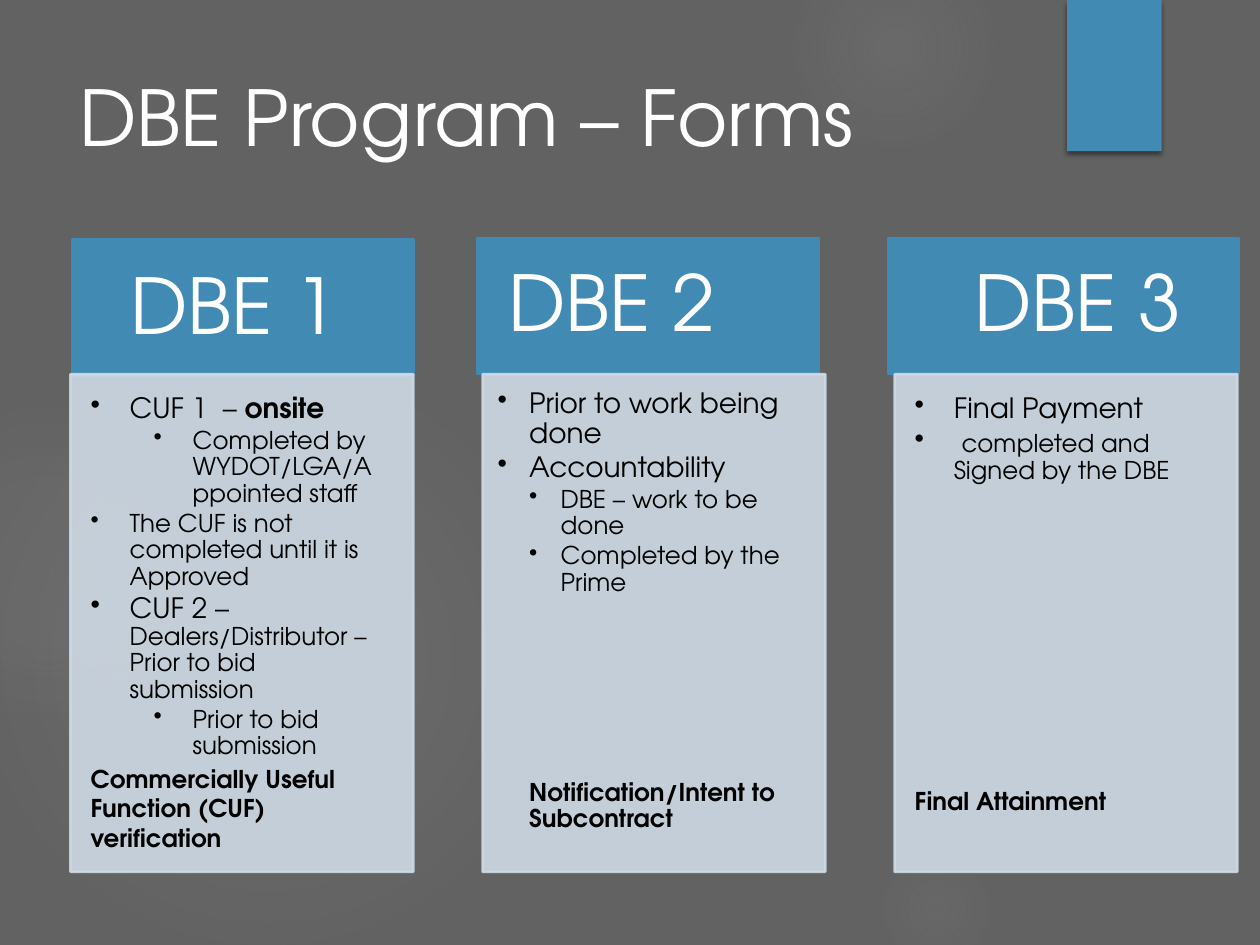
from lxml import etree
from pptx import Presentation
from pptx.dml.color import RGBColor
from pptx.enum.shapes import MSO_SHAPE
from pptx.enum.text import MSO_ANCHOR, PP_ALIGN
from pptx.oxml import parse_xml
from pptx.oxml.ns import nsdecls, qn
from pptx.util import Inches, Pt

RECTANGLE, OVAL = MSO_SHAPE.RECTANGLE, MSO_SHAPE.OVAL
TOP, MIDDLE = MSO_ANCHOR.TOP, MSO_ANCHOR.MIDDLE
LEFT, CENTER = PP_ALIGN.LEFT, PP_ALIGN.CENTER
FONT = "TeX Gyre Adventor"
BLUE, PALE, WHITE, BLACK, GREY = "418AB3", "CFDAE5", "FFFFFF", "000000", "626262"
color = RGBColor.from_string


def add_block(kind, box, fill):
    shape = slide.shapes.add_shape(kind, *map(Inches, box))
    shape.shadow.inherit = False
    shape.fill.solid()
    shape.fill.fore_color.rgb = color(fill)
    shape.line.color.rgb = color(fill)
    shape.line.width = Pt(1.5)
    return shape


def set_font(run, size, hex_color, bold=False):
    run.font.name, run.font.size, run.font.bold = FONT, Pt(size), bold
    run.font.color.rgb = color(hex_color)


presentation = Presentation()
presentation.slide_width, presentation.slide_height = Inches(10), Inches(7.5)
slide = presentation.slides.add_slide(presentation.slide_layouts[5])
slide.background.fill.solid()
slide.background.fill.fore_color.rgb = color(GREY)

# Soft background glows: left, top, diameter, (position %, opacity %) stops
glows = [
    (6.89, 1.83, 3.08, [(0, 7), (36, 6), (69, 0)]),
    (6.22, -0.5, 1.75, [(0, 14), (36, 7), (73, 0)]),
    (6.89, 6.67, 1.08, [(0, 9), (36, 5), (66, 0)]),
    (-0.17, 2.92, 4.58, [(0, 11), (36, 10), (75, 0)]),
    (-0.92, 3.17, 2.58, [(0, 8), (36, 8), (72, 0)]),
]
for left, top, diameter, stops in glows:
    glow = add_block(OVAL, (left, top, diameter, diameter), GREY)
    glow.line.fill.background()
    stop_xml = "".join(
        f'<a:gs pos="{position * 1000}"><a:srgbClr val="9E9E9E">'
        f'<a:alpha val="{opacity * 1000}"/></a:srgbClr></a:gs>'
        for position, opacity in stops)
    gradient = parse_xml(
        f'<a:gradFill {nsdecls("a")}><a:gsLst>{stop_xml}</a:gsLst><a:path path="circle">'
        '<a:fillToRect l="50000" t="50000" r="50000" b="50000"/></a:path></a:gradFill>')
    properties = glow._element.spPr
    properties.replace(properties.find(qn("a:solidFill")), gradient)

ribbon = add_block(RECTANGLE, (8.47, 0, 0.75, 1.2), BLUE)
ribbon.line.fill.background()
ribbon._element.spPr.find(qn("a:effectLst")).append(parse_xml(
    f'<a:outerShdw {nsdecls("a")} blurRad="38100" dist="25400" dir="5400000">'
    '<a:srgbClr val="000000"><a:alpha val="45000"/></a:srgbClr></a:outerShdw>'))

title = slide.shapes.title
slide.shapes._spTree.append(title._element)  # in front of the glows
title.left, title.top, title.width, title.height = map(Inches, (0.53, 0.5, 7.72, 1.53))
title.text_frame.text = "DBE Program – Forms"
title.text_frame.vertical_anchor = TOP
title.text_frame.paragraphs[0].alignment = LEFT
set_font(title.text_frame.paragraphs[0].runs[0], 44, WHITE)

# Heading: bar left, top, width; label left, top, width
headings = [
    ("DBE 1", (0.57, 1.9, 2.71), (0.58, 1.92, 2.55)),
    ("DBE 2", (3.79, 1.89, 2.71), (3.5, 1.89, 2.71)),
    ("DBE 3", (7.05, 1.89, 2.78), (7.28, 1.89, 2.55)),
]
# Paragraph: level, left margin, bulleted, line spacing, space before, runs (text, size, bold)
wide, narrow = (0.16, 0.16, 0.22, 0.24), (0.12, 0.12, 0.16, 0.17)
bodies = [
    (wide, 0.31, [
        (1, 0.31, True, 0.9, 0, [("CUF 1  – ", 16, False), ("onsite", 16, True)]),
        (2, 0.81, True, 0.9, 0, [("Completed by WYDOT/LGA/Appointed staff", 14, False)]),
        (1, 0.31, True, 0.9, 0, [("The CUF is not completed until it is Approved", 14, False)]),
        (1, 0.31, True, 0.9, 0, [("CUF 2 –", 16, False),
                                 (" Dealers/Distributor – Prior to bid submission", 14, False)]),
        (2, 0.81, True, 0.9, 0, [("Prior to bid submission", 14, False)]),
        (0, 0, False, 1, 0, [("Commercially Useful Function (CUF) verification", 14, True)]),
    ]),
    (narrow, 0.25, [
        (1, 0.25, True, 0.9, 0, [("Prior to work being done", 16, False)]),
        (1, 0.25, True, 0.9, 0, [("Accountability", 16, False)]),
        (2, 0.5, True, 0.9, 0, [("DBE – work to be done", 14, False)]),
        (2, 0.5, True, 0.9, 0, [("Completed by the Prime", 14, False)]),
        (2, 0.25, False, 0.9, 103, [("Notification/Intent to Subcontract", 14, True)]),
    ]),
    (wide, 0.31, [
        (1, 0.31, True, 0.9, 0, [("Final Payment", 16, False)]),
        (1, 0.31, True, 0.9, 0, [(" ", 16, False),
                                 ("completed and Signed by the DBE", 14, False)]),
        (1, 0, False, 0.9, 172, [("Final Attainment", 14, True)]),
    ]),
]
BODY_LEFT, BODY_TOP, BODY_WIDTH, BODY_HEIGHT, COLUMN_STEP = 0.56, 2.97, 2.72, 3.95, 3.27
HEADING_HEIGHT = 1.08

for column, (heading, body) in enumerate(zip(headings, bodies)):
    name, bar_place, label_place = heading
    add_block(RECTANGLE, (*bar_place, HEADING_HEIGHT), BLUE)
    label = slide.shapes.add_textbox(*map(Inches, (*label_place, HEADING_HEIGHT)))
    frame = label.text_frame
    frame.word_wrap, frame.vertical_anchor = True, MIDDLE
    frame.margin_left = frame.margin_right = Inches(0.34)
    frame.margin_top = frame.margin_bottom = Inches(0.2)
    frame.text = name
    frame.paragraphs[0].alignment = CENTER
    frame.paragraphs[0].line_spacing = 0.9
    set_font(frame.paragraphs[0].runs[0], 44, WHITE)

    insets, hanging, items = body
    panel = add_block(RECTANGLE, (BODY_LEFT + column * COLUMN_STEP, BODY_TOP,
                                  BODY_WIDTH, BODY_HEIGHT), PALE)
    for tint in panel._element.spPr.iter(qn("a:srgbClr")):
        etree.SubElement(tint, qn("a:alpha")).set("val", "90000")
    frame = panel.text_frame
    frame.word_wrap, frame.vertical_anchor = True, TOP
    (frame.margin_left, frame.margin_top,
     frame.margin_right, frame.margin_bottom) = map(Inches, insets)
    for index, (level, margin, bulleted, spacing, before, runs) in enumerate(items):
        paragraph = frame.add_paragraph() if index else frame.paragraphs[0]
        paragraph.alignment, paragraph.level = LEFT, level
        paragraph.line_spacing = spacing
        paragraph.space_before, paragraph.space_after = Pt(before), Pt(2)
        properties = paragraph._p.get_or_add_pPr()
        properties.set("marL", str(Inches(margin)))
        properties.set("indent", str(Inches(-hanging if bulleted else 0)))
        if bulleted:
            etree.SubElement(properties, qn("a:buChar")).set("char", "•")
        for text, size, bold in runs:
            run = paragraph.add_run()
            run.text = text
            set_font(run, size, BLACK, bold)

presentation.save("out.pptx")
